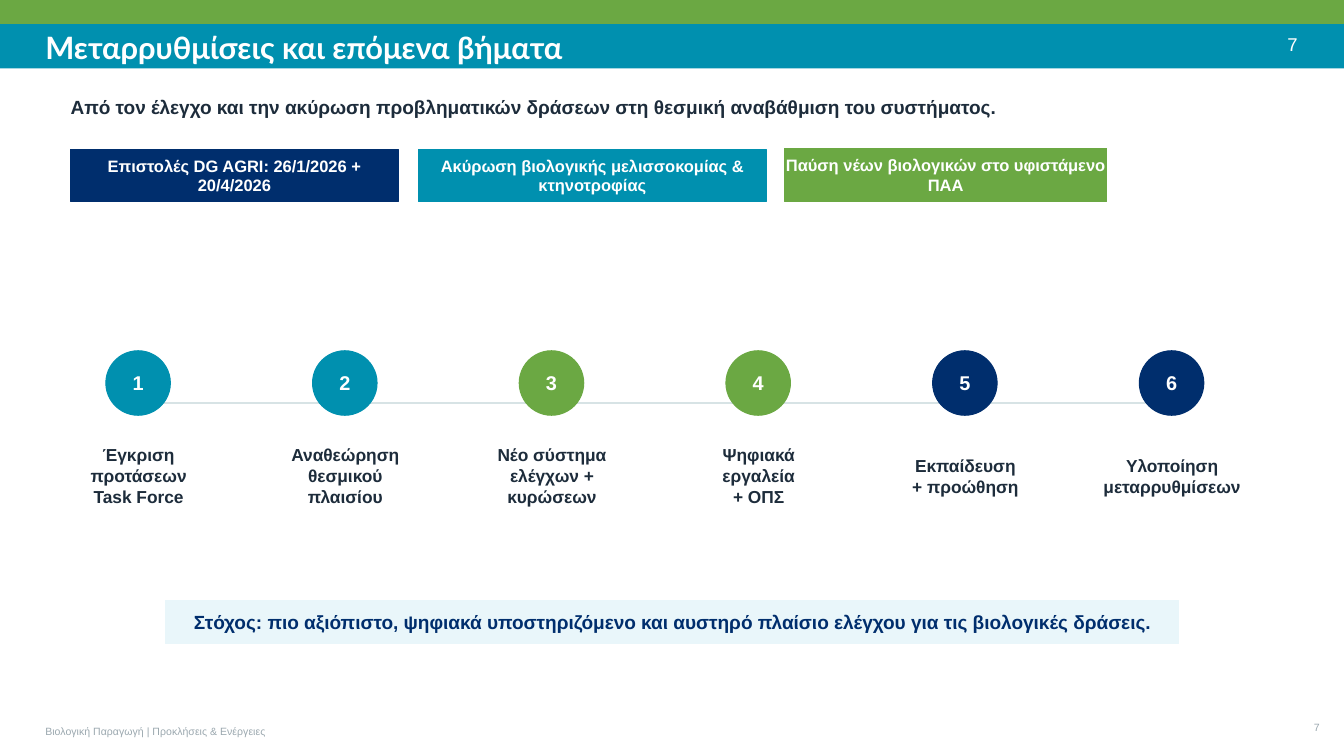
import pptx
import pptx.util
import pptx.dml.color
import pptx.enum.shapes
import pptx.enum.text
import pptx.oxml.ns
import lxml.etree

PX = 9144  # EMU in one px, at 100 px to the inch

GREEN, TEAL, NAVY = "6BA843", "0090AF", "002E6D"
WHITE, INK, GREY = "FFFFFF", "1D2C3B", "9BA8AF"
PALE, RAIL = "E9F6FA", "D7E3E5"

LEFT = pptx.enum.text.PP_ALIGN.LEFT
CENTER = pptx.enum.text.PP_ALIGN.CENTER
RIGHT = pptx.enum.text.PP_ALIGN.RIGHT
RECT = pptx.enum.shapes.MSO_SHAPE.RECTANGLE
OVAL = pptx.enum.shapes.MSO_SHAPE.OVAL

ACTIONS = [
    ((70, 148, 325, 52), NAVY, "Επιστολές DG AGRI: 26/1/2026 + 20/4/2026"),
    ((415, 148, 345, 52), TEAL, "Ακύρωση βιολογικής μελισσοκομίας & κτηνοτροφίας"),
    ((778, 147, 320, 53), GREEN, "Παύση νέων βιολογικών στο υφιστάμενο ΠΑΑ"),
]
STEPS = [
    (TEAL, "Έγκριση\nπροτάσεων\nTask Force"),
    (TEAL, "Αναθεώρηση\nθεσμικού\nπλαισίου"),
    (GREEN, "Νέο σύστημα\nελέγχων +\nκυρώσεων"),
    (GREEN, "Ψηφιακά\nεργαλεία\n+ ΟΠΣ"),
    (NAVY, "Εκπαίδευση\n+ προώθηση"),
    (NAVY, "Υλοποίηση\nμεταρρυθμίσεων"),
]
STEP_PITCH = 205


def px(*lengths):
    return [pptx.util.Emu(length * PX) for length in lengths]


def rgb(color):
    return pptx.dml.color.RGBColor.from_string(color)


def write(shape, text, size, color, align=LEFT, bold=True, font="Arial"):
    """Put text in a shape, one paragraph a line, centred vertically without insets."""
    frame = shape.text_frame
    frame_format = {
        "word_wrap": True,
        "auto_size": pptx.enum.text.MSO_AUTO_SIZE.NONE,
        "vertical_anchor": pptx.enum.text.MSO_ANCHOR.MIDDLE,
        "margin_left": 0, "margin_top": 0, "margin_right": 0, "margin_bottom": 0,
    }
    for name, value in frame_format.items():
        setattr(frame, name, value)
    frame.text = text
    font_format = {"name": font, "size": pptx.util.Pt(size), "bold": bold}
    for paragraph in frame.paragraphs:
        paragraph.alignment = align
        for run in paragraph.runs:
            for name, value in font_format.items():
                setattr(run.font, name, value)
            run.font.color.rgb = rgb(color)


def add_label(slide, box, text, size, color, **style):
    write(slide.shapes.add_textbox(*px(*box)), text, size, color, **style)


def add_block(slide, kind, box, fill, outlined=True):
    block = slide.shapes.add_shape(kind, *px(*box))
    block.shadow.inherit = False
    block.fill.solid()
    block.fill.fore_color.rgb = rgb(fill)
    if outlined:
        block.line.color.rgb = rgb(fill)
        block.line.width = pptx.util.Pt(0.75)
    else:
        block.line.fill.background()
    return block


def add_rail(slide):
    rail = slide.shapes.add_connector(
        pptx.enum.shapes.MSO_CONNECTOR.STRAIGHT, *px(130, 400, 1150, 400))
    rail.line.color.rgb = rgb(RAIL)
    rail.line.width = pptx.util.Pt(1.1)
    lxml.etree.SubElement(rail._element.spPr, pptx.oxml.ns.qn("a:effectLst"))


def add_header(slide):
    add_block(slide, RECT, (0, 0, 1333, 24), GREEN, outlined=False)
    add_block(slide, RECT, (0, 24, 1333, 44), TEAL, outlined=False)
    title = slide.shapes.title
    title.left, title.top, title.width, title.height = px(45, 26, 1060, 42)
    write(title, "Μεταρρυθμίσεις και επόμενα βήματα", 22, WHITE, font="Lato")
    slide.shapes._spTree.append(title._element)  # in front of the bands
    add_label(slide, (1255, 32, 32, 24), "7", 13.2, WHITE, align=RIGHT, bold=False)


def add_step(slide, index, color, caption):
    offset = index * STEP_PITCH
    circle = add_block(slide, OVAL, (105 + offset, 348, 64, 64), color)
    write(circle, str(index + 1), 14.2, WHITE, align=CENTER)
    add_label(slide, (60 + offset, 428, 155, 88), caption, 12.4, INK, align=CENTER)


def add_footer(slide):
    add_label(slide, (45, 719, 380, 14), "Βιολογική Παραγωγή | Προκλήσεις & Ενέργειες",
              7.5, GREY, bold=False)
    add_label(slide, (1285, 715, 24, 14), "7", 7.5, GREY, align=RIGHT, bold=False)


def main():
    deck = pptx.Presentation()
    deck.slide_width, deck.slide_height = px(1333, 750)
    slide = deck.slides.add_slide(deck.slide_layouts.get_by_name("Title Only"))

    add_header(slide)
    add_label(slide, (70, 80, 1165, 52),
              "Από τον έλεγχο και την ακύρωση προβληματικών δράσεων "
              "στη θεσμική αναβάθμιση του συστήματος.", 13.6, INK)
    for box, color, action in ACTIONS:
        write(add_block(slide, RECT, box, color), action, 11.8, WHITE, align=CENTER)

    add_rail(slide)
    for index, (color, caption) in enumerate(STEPS):
        add_step(slide, index, color, caption)

    goal = add_block(slide, RECT, (164, 596, 1005, 42), PALE)
    write(goal, "Στόχος: πιο αξιόπιστο, ψηφιακά υποστηριζόμενο και αυστηρό "
                "πλαίσιο ελέγχου για τις βιολογικές δράσεις.", 13.6, NAVY, align=CENTER)
    add_footer(slide)
    deck.save("out.pptx")


if __name__ == "__main__":
    main()
